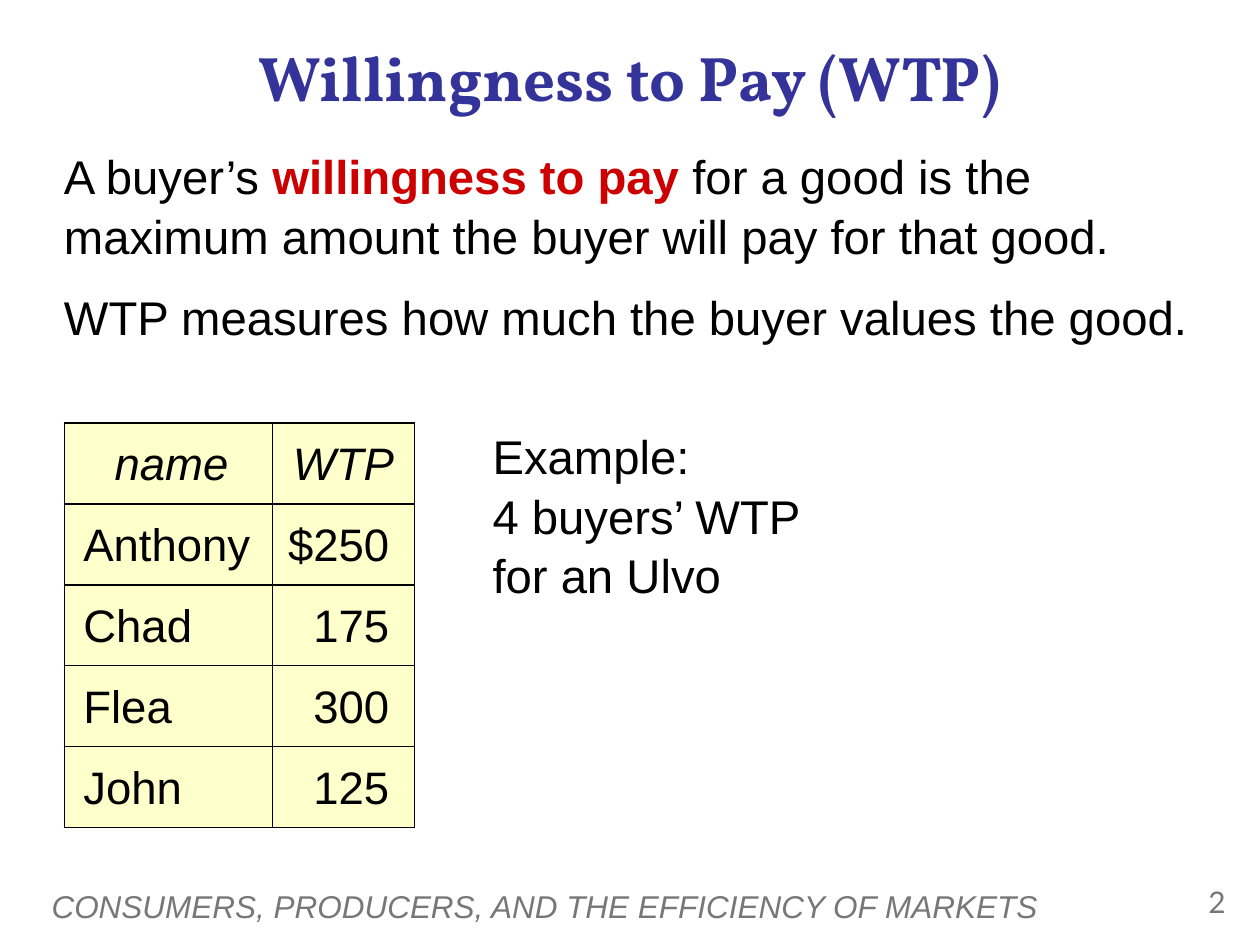
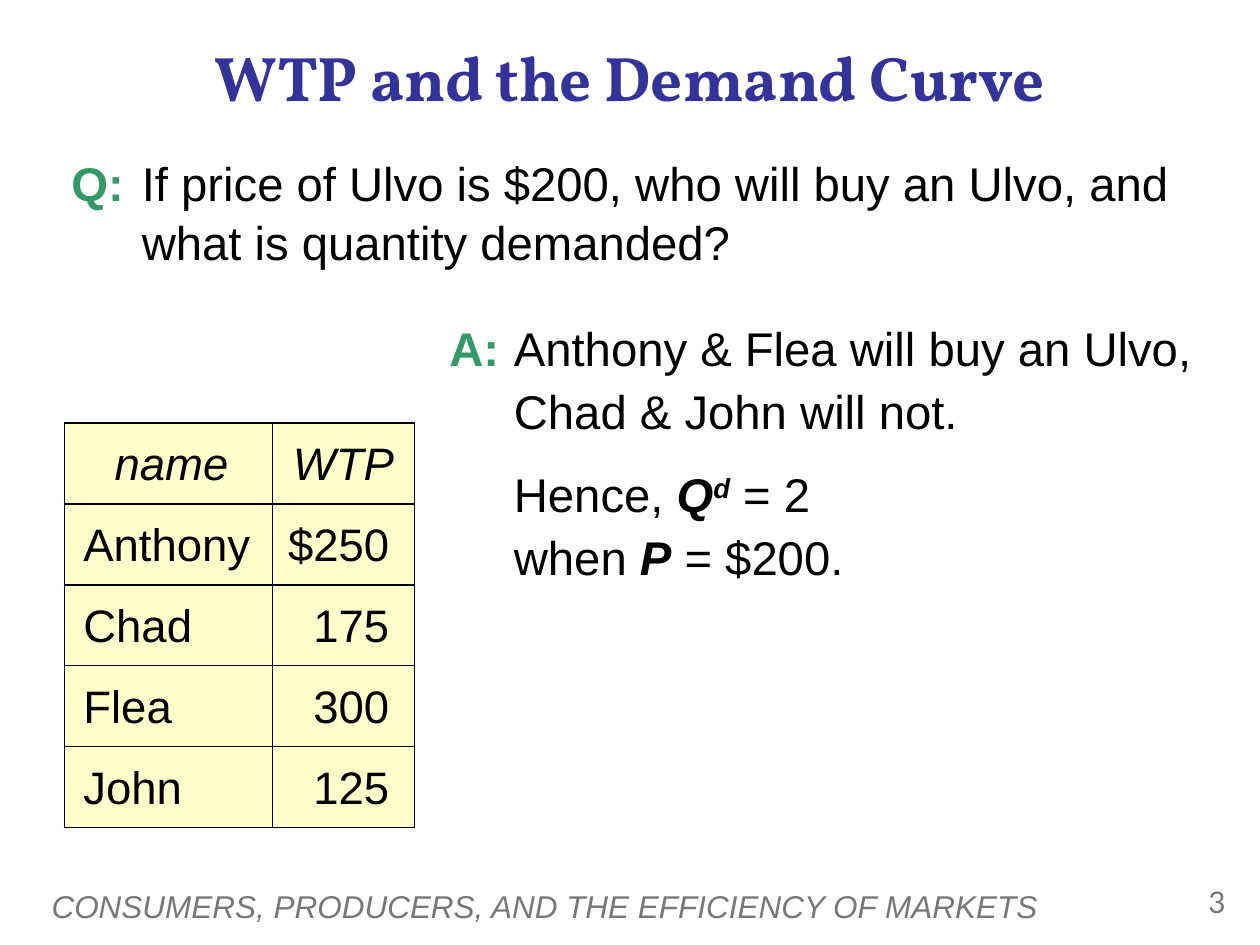
import pptx
import pptx.util
import pptx.dml.color
import pptx.enum.text
import pptx.oxml
import pptx.oxml.ns
from dataclasses import dataclass

Cm = pptx.util.Cm
Pt = pptx.util.Pt
ALIGN = pptx.enum.text.PP_ALIGN
ANCHOR = pptx.enum.text.MSO_ANCHOR


@dataclass(frozen=True)
class Theme:
    title: dict
    body: dict
    table: dict
    footer: dict
    number: dict
    key_term: dict
    label: dict
    variable: dict
    cell_fill: str = "FFFFCC"
    border: str = "000000"
    border_width: int = 1
    paragraph_gap: float = 12.15


THEME = Theme(
    title={"name": "Vollkorn", "size": Pt(36), "bold": True, "color": "333399"},
    body={"name": "Arial", "size": Pt(27), "color": "000000"},
    table={"name": "Arial", "size": Pt(26), "color": "000000"},
    footer={"name": "Arial", "size": Pt(18), "italic": True, "color": "777777"},
    number={"name": "Lato", "size": Pt(17), "color": "777777"},
    key_term={"bold": True, "color": "CC0000"},
    label={"bold": True, "color": "339966"},
    variable={"bold": True, "italic": True},
)
SUPERSCRIPT = THEME.variable | {"baseline": 30000}

FOOTER = "CONSUMERS, PRODUCERS, AND THE EFFICIENCY OF MARKETS"
FIRST_NUMBER = 2
BUYERS = [("name", "WTP"), ("Anthony", "$250"), ("Chad", "175"), ("Flea", "300"), ("John", "125")]

SLIDES = [
    {
        "title": "Willingness to Pay (WTP)",
        "texts": [
            {
                "box": (1.04, 2.79, 23.24, 5.36),
                "paragraphs": [
                    [
                        ("A buyer’s ", {}),
                        ("willingness to pay", THEME.key_term),
                        (" for a good is the maximum amount the buyer will pay for that good.", {}),
                    ],
                    [("WTP measures how much the buyer values the good.", {})],
                ],
            },
            {
                "box": (9.68, 8.43, 7.87, 3.86),
                "paragraphs": [[("Example:\n4 buyers’ WTP\nfor an Ulvo", {})]],
            },
        ],
    },
    {
        "title": "WTP and the Demand Curve",
        "texts": [
            {
                "box": (1.19, 2.92, 22.71, 3.05),
                "hanging": 1.42,
                "paragraphs": [
                    [
                        ("Q:\t", THEME.label),
                        ("If price of Ulvo is $200, who will buy an Ulvo, and what is quantity demanded?", {}),
                    ]
                ],
            },
            {
                "box": (8.81, 6.2, 15.54, 5.79),
                "hanging": 1.3,
                "spacing": 1.1,
                "paragraphs": [
                    [
                        ("A:", THEME.label),
                        ("\tAnthony & Flea will buy an Ulvo, Chad & John will not.", {}),
                    ],
                    [
                        ("\tHence, ", {}),
                        ("Q", THEME.variable),
                        ("d", SUPERSCRIPT),
                        (" = 2\nwhen ", {}),
                        ("P", THEME.variable),
                        (" = $200.", {}),
                    ],
                ],
            },
        ],
    },
]

TITLE_BOX = (1.27, 0.64, 22.86, 1.8)
FOOTER_BOX = (0.79, 17.75, 21.89, 1.02)
NUMBER_BOX = (23.06, 17.7, 1.9, 1.02)
TABLE_CORNER = (1.3, 8.53)
COLUMN_WIDTHS = (4.19, 2.87)
ROW_HEIGHT = 1.63


def set_all(target, values):
    for name, value in values.items():
        setattr(target, name, value)


def add_run(paragraph, text, style):
    run = paragraph.add_run()
    run.text = text
    style = dict(style)
    run.font.color.rgb = pptx.dml.color.RGBColor.from_string(style.pop("color"))
    baseline = style.pop("baseline", None)
    if baseline:
        run._r.get_or_add_rPr().set("baseline", str(baseline))
    set_all(run.font, style)


def write(frame, paragraphs, style, align=ALIGN.LEFT, spacing=1.0, hanging=0):
    for index, runs in enumerate(paragraphs):
        paragraph = frame.add_paragraph() if index else frame.paragraphs[0]
        set_all(paragraph, {"alignment": align, "line_spacing": spacing})
        if index:
            paragraph.space_before = Pt(THEME.paragraph_gap)
        if hanging:
            properties = paragraph._p.get_or_add_pPr()
            properties.set("marL", str(Cm(hanging)))
            properties.set("indent", str(-Cm(hanging)))
        for text, changes in runs:
            for line_index, line in enumerate(text.split("\n")):
                if line_index:
                    paragraph.add_line_break()
                add_run(paragraph, line, style | changes)


def add_text(slide, box, paragraphs, style, anchor=ANCHOR.TOP, **layout):
    frame = slide.shapes.add_textbox(*map(Cm, box)).text_frame
    set_all(frame, {"word_wrap": True, "vertical_anchor": anchor})
    write(frame, paragraphs, style, **layout)


def set_title(slide, text):
    title = slide.shapes.title
    set_all(title, dict(zip(("left", "top", "width", "height"), map(Cm, TITLE_BOX))))
    set_all(title.text_frame, {
        "word_wrap": True,
        "auto_size": pptx.enum.text.MSO_AUTO_SIZE.NONE,
        "vertical_anchor": ANCHOR.MIDDLE,
    })
    write(title.text_frame, [[(text, {})]], THEME.title, ALIGN.CENTER)


def add_borders(cell):
    properties = cell._tc.get_or_add_tcPr()
    for side in ("lnL", "lnR", "lnT", "lnB"):
        properties.append(pptx.oxml.parse_xml(
            f'<a:{side} {pptx.oxml.ns.nsdecls("a")} w="{Pt(THEME.border_width)}">'
            f'<a:solidFill><a:srgbClr val="{THEME.border}"/></a:solidFill></a:{side}>'
        ))


def add_buyer_table(slide):
    size = (sum(COLUMN_WIDTHS), ROW_HEIGHT * len(BUYERS))
    table = slide.shapes.add_table(
        len(BUYERS), len(COLUMN_WIDTHS), *map(Cm, TABLE_CORNER + size)
    ).table
    set_all(table, {"first_row": False, "horz_banding": False})
    for column, width in zip(table.columns, COLUMN_WIDTHS):
        column.width = Cm(width)
    for row_index, values in enumerate(BUYERS):
        table.rows[row_index].height = Cm(ROW_HEIGHT)
        header = row_index == 0
        for column_index, value in enumerate(values):
            is_name = column_index == 0
            cell = table.cell(row_index, column_index)
            set_all(cell, {
                "vertical_anchor": ANCHOR.MIDDLE,
                "margin_left": Cm(0.38 if is_name else 0.25),
                "margin_right": Cm(0.25 if is_name or header else 0.51),
            })
            add_borders(cell)
            cell.fill.solid()
            cell.fill.fore_color.rgb = pptx.dml.color.RGBColor.from_string(THEME.cell_fill)
            align = ALIGN.CENTER if header else ALIGN.LEFT if is_name else ALIGN.RIGHT
            write(cell.text_frame, [[(value, {"italic": header})]], THEME.table, align, 1.05)


def add_slide(presentation, number, content):
    slide = presentation.slides.add_slide(presentation.slide_layouts[5])
    set_title(slide, content["title"])
    add_text(slide, FOOTER_BOX, [[(FOOTER, {})]], THEME.footer, ANCHOR.MIDDLE)
    add_text(slide, NUMBER_BOX, [[(str(number), {})]], THEME.number, align=ALIGN.RIGHT)
    for text in content["texts"]:
        add_text(
            slide, text["box"], text["paragraphs"], THEME.body,
            spacing=text.get("spacing", 1.05), hanging=text.get("hanging", 0),
        )
    add_buyer_table(slide)


def main():
    presentation = pptx.Presentation()
    set_all(presentation, {"slide_width": Cm(25.4), "slide_height": Cm(19.05)})
    for number, content in enumerate(SLIDES, FIRST_NUMBER):
        add_slide(presentation, number, content)
    presentation.save("out.pptx")


if __name__ == "__main__":
    main()
